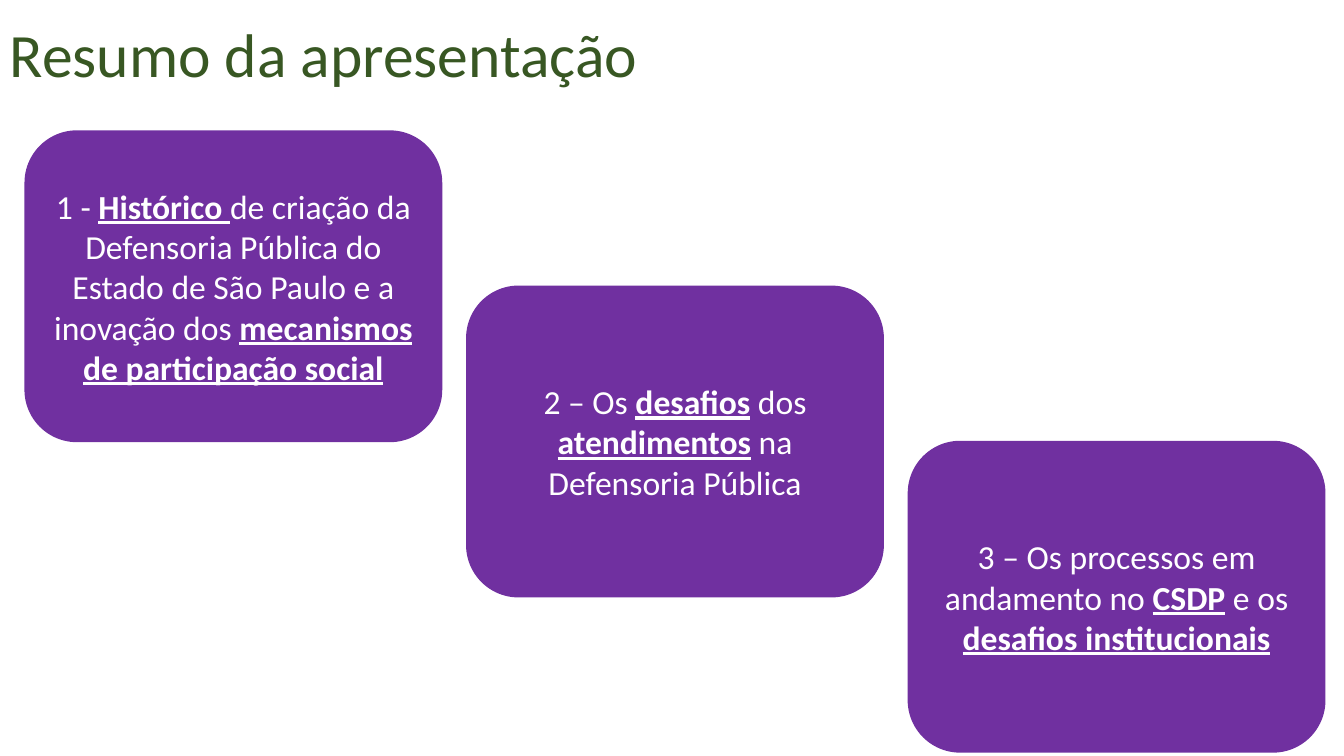
import dataclasses

import pptx
import pptx.dml.color
import pptx.enum.shapes
import pptx.enum.text
import pptx.util
from pptx.util import Inches


@dataclasses.dataclass(frozen=True)
class Theme:
    font: str = "Calibri"
    title_color: str = "385723"
    card_color: str = "7030A0"
    card_text_color: str = "FFFFFF"
    title_size: int = 44
    card_size: int = 24
    card_line_width: int = 1


class SlideBuilder:
    def __init__(self, slide, theme):
        self.slide = slide
        self.theme = theme

    def style_font(self, font, size, color):
        font.name = self.theme.font
        font.size = pptx.util.Pt(size)
        font.color.rgb = pptx.dml.color.RGBColor.from_string(color)

    def add_title(self, text, left, top, width, height):
        shape = self.slide.shapes.add_textbox(left, top, width, height)
        frame = shape.text_frame
        frame.word_wrap = True
        frame.vertical_anchor = pptx.enum.text.MSO_ANCHOR.MIDDLE
        paragraph = frame.paragraphs[0]
        paragraph.text = text
        paragraph.line_spacing = 0.9
        self.style_font(paragraph.font, self.theme.title_size, self.theme.title_color)

    def add_card(self, marked_text, left, top, width, height):
        """Add a rounded card; text between asterisks is bold and underlined."""
        shape = self.slide.shapes.add_shape(
            pptx.enum.shapes.MSO_SHAPE.ROUNDED_RECTANGLE, left, top, width, height)
        shape.shadow.inherit = False
        color = pptx.dml.color.RGBColor.from_string(self.theme.card_color)
        shape.fill.solid()
        shape.fill.fore_color.rgb = color
        shape.line.color.rgb = color
        shape.line.width = pptx.util.Pt(self.theme.card_line_width)
        frame = shape.text_frame
        frame.word_wrap = True
        frame.vertical_anchor = pptx.enum.text.MSO_ANCHOR.MIDDLE
        paragraph = frame.paragraphs[0]
        paragraph.alignment = pptx.enum.text.PP_ALIGN.CENTER
        self.style_font(paragraph.font, self.theme.card_size, self.theme.card_text_color)
        for index, text in enumerate(marked_text.split("*")):
            if text:
                run = paragraph.add_run()
                run.text = text
                if index % 2:
                    run.font.bold = True
                    run.font.underline = True


TOPICS = [
    "1 - *Histórico *de criação da Defensoria Pública do Estado de São Paulo "
    "e a inovação dos *mecanismos de participação social*",
    "2 – Os *desafios* dos *atendimentos* na Defensoria Pública",
    "3 – Os processos em andamento no *CSDP* e os *desafios institucionais*",
]


def main():
    presentation = pptx.Presentation()
    presentation.slide_width = Inches(13.33)
    presentation.slide_height = Inches(7.5)
    slide = presentation.slides.add_slide(presentation.slide_layouts[6])
    builder = SlideBuilder(slide, Theme())

    builder.add_title("Resumo da apresentação",
                      Inches(0), Inches(-0.15), Inches(11.5), Inches(1.45))

    card_width, card_height = 4.13, 3.08
    column_step = card_width + 0.25
    row_step = card_height / 2
    for index, topic in enumerate(TOPICS):
        builder.add_card(topic,
                         Inches(0.25 + index * column_step),
                         Inches(1.3 + index * row_step),
                         Inches(card_width), Inches(card_height))

    presentation.save("out.pptx")


if __name__ == "__main__":
    main()
